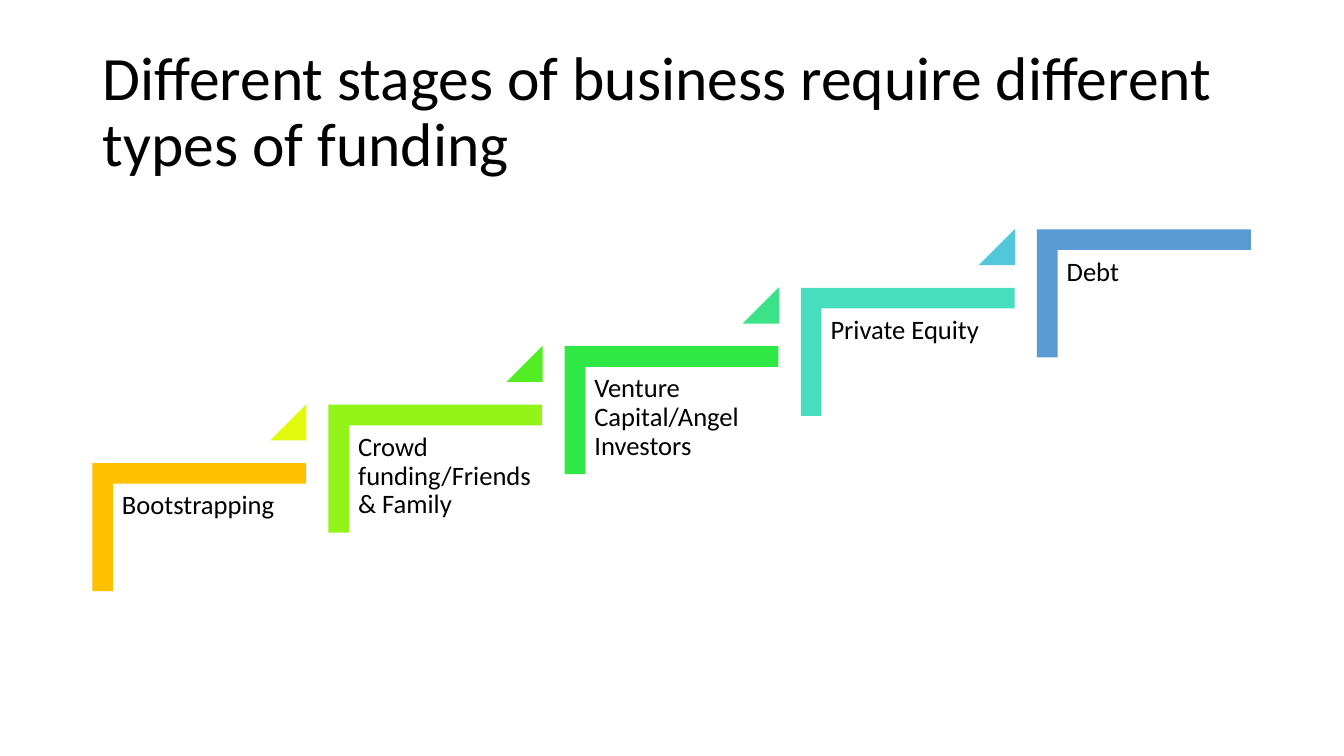
from dataclasses import dataclass

from pptx import Presentation
from pptx import util as u
from pptx.dml.color import RGBColor
from pptx.enum import shapes, text


@dataclass
class Theme:
    font: str = "Calibri"
    ink: str = "000000"
    title_size: int = 44
    label_size: int = 19
    steps: tuple = ("FFC000", "94F319", "30E845", "46DEBF", "5B9BD5")
    arrows: tuple = ("E3F90C", "52ED24", "3BE287", "51C7D9")


theme = Theme()

deck = Presentation()
deck.slide_width, deck.slide_height = u.Inches(13.33), u.Inches(7.5)
page = deck.slides.add_slide(deck.slide_layouts[6])


def add_text(words, *, at, size, anchor=text.MSO_ANCHOR.TOP, inset=(0.08, 0.08)):
    box = page.shapes.add_textbox(*map(u.Inches, at))
    frame = box.text_frame
    frame.word_wrap = True
    frame.vertical_anchor = anchor
    frame.margin_left = frame.margin_right = u.Inches(inset[0])
    frame.margin_top = frame.margin_bottom = u.Inches(inset[1])
    para = frame.paragraphs[0]
    para.line_spacing = 0.9
    span = para.add_run()
    span.text = words
    span.font.name = theme.font
    span.font.size = u.Pt(size)
    span.font.color.rgb = RGBColor.from_string(theme.ink)


def add_block(kind, *, at, color, adjustments, rotation=0):
    block = page.shapes.add_shape(kind, *map(u.Inches, at))
    block.shadow.inherit = False
    block.rotation = rotation
    block.fill.solid()
    block.fill.fore_color.rgb = RGBColor.from_string(color)
    block.line.fill.background()
    for index, value in enumerate(adjustments):
        block.adjustments[index] = value


# Title
add_text("Different stages of business require different types of funding",
         at=(0.92, 0.4, 11.5, 1.45), size=theme.title_size,
         anchor=text.MSO_ANCHOR.MIDDLE, inset=(0.1, 0.05))

# Staircase of funding stages, rising from left to right
stages = ["Bootstrapping", "Crowd funding/Friends & Family",
          "Venture Capital/Angel Investors", "Private Equity", "Debt"]
run = (10.71 - 1.34) / (len(stages) - 1)
rise = 0.58

for number, stage in enumerate(stages):
    across, up = number * run, number * rise
    add_block(shapes.MSO_SHAPE.CORNER, at=(1.34 + across, 4.17 - up, 1.27, 2.12),
              color=theme.steps[number], adjustments=(0.161, 0.161), rotation=90)
    add_text(stage, at=(1.13 + across, 4.8 - up, 1.91, 1.68), size=theme.label_size)
    # Triangle that leads up to the next stage
    if number < len(theme.arrows):
        add_block(shapes.MSO_SHAPE.ISOSCELES_TRIANGLE,
                  at=(2.68 + across, 4.01 - up, 0.36, 0.36),
                  color=theme.arrows[number], adjustments=(1,))

deck.save("out.pptx")
